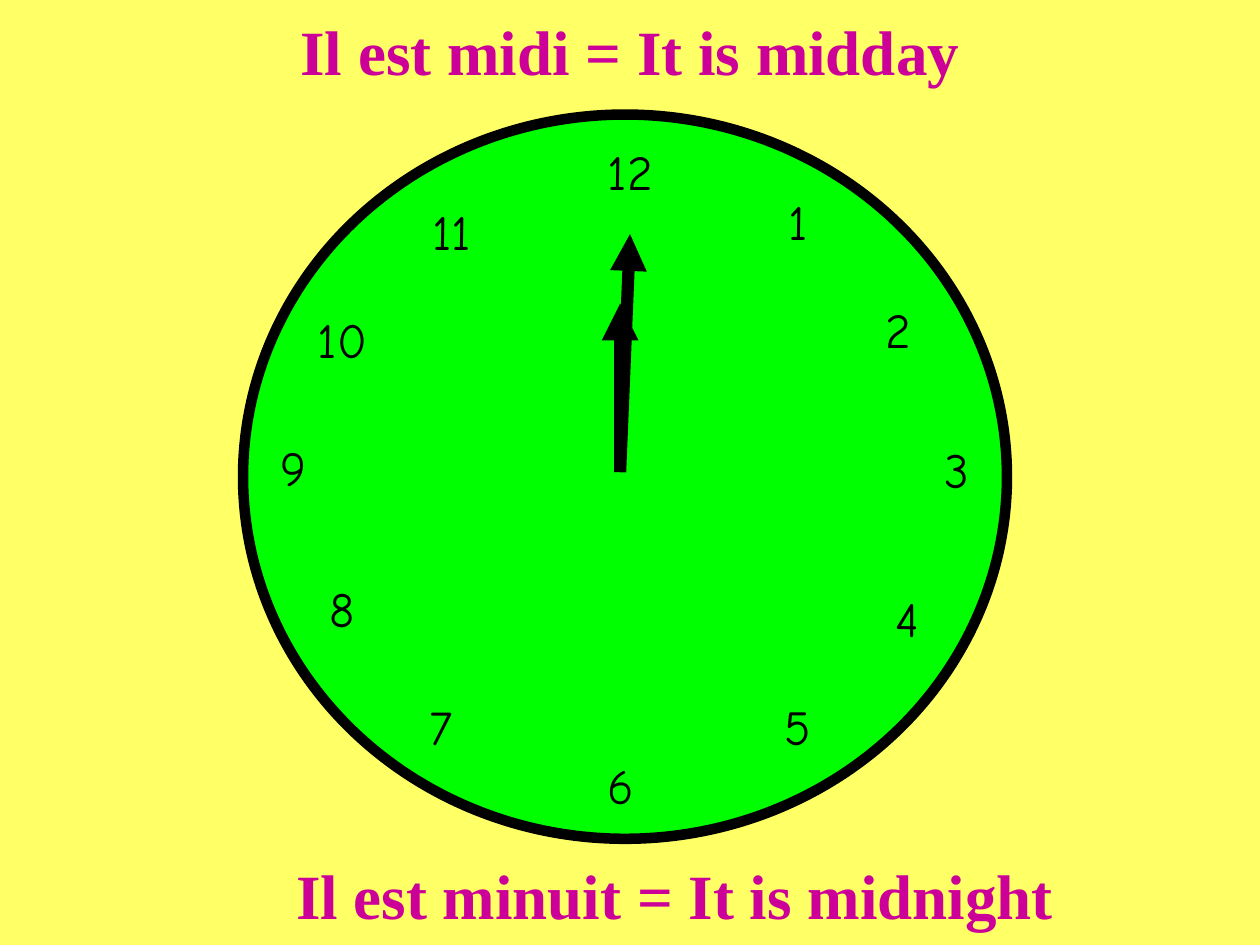
from dataclasses import dataclass

from lxml import etree
from pptx import Presentation
from pptx import util as u
from pptx.dml.color import RGBColor
from pptx.enum import shapes, text
from pptx.oxml.ns import qn


@dataclass(frozen=True)
class Theme:
    background: str = "FFFF66"
    face: str = "00FF00"
    ink: str = "000000"
    caption: str = "CC0099"
    number_font: str = "Comic Neue"
    caption_font: str = "Times New Roman"
    number_size: int = 28
    caption_size: int = 36
    rim_width: int = 6
    hand_width: int = 7


def color(value):
    return RGBColor.from_string(value)


def set_attributes(target, values):
    for name, value in values.items():
        setattr(target, name, value)


class ClockSlide:
    def __init__(self, presentation, theme):
        self.theme = theme
        self.slide = presentation.slides.add_slide(presentation.slide_layouts[6])
        fill = self.slide.background.fill
        fill.solid()
        fill.fore_color.rgb = color(theme.background)
        self.clock = self.slide.shapes.add_group_shape().shapes

    def outline(self, line, width):
        line.color.rgb = color(self.theme.ink)
        line.width = u.Pt(width)

    def face(self, left, top, width, height):
        shape = self.clock.add_shape(
            shapes.MSO_SHAPE.OVAL, u.Cm(left), u.Cm(top), u.Cm(width), u.Cm(height)
        )
        shape.shadow.inherit = False
        shape.fill.solid()
        shape.fill.fore_color.rgb = color(self.theme.face)
        self.outline(shape.line, self.theme.rim_width)

    def hand(self, tip, pivot):
        """Draw a clock hand with its arrowhead at the tip."""
        points = [u.Cm(value) for value in (*tip, *pivot)]
        connector = self.clock.add_connector(shapes.MSO_CONNECTOR.STRAIGHT, *points)
        self.outline(connector.line, self.theme.hand_width)
        properties = connector._element.spPr
        line = properties.find(qn("a:ln"))
        etree.SubElement(line, qn("a:headEnd"), type="triangle")
        etree.SubElement(properties, qn("a:effectLst"))

    def label(self, parent, content, box, font_values, font_color):
        """Add centred text with half a line of space before it."""
        frame = parent.add_textbox(*(u.Cm(value) for value in box)).text_frame
        set_attributes(frame, {
            "word_wrap": True,
            "auto_size": text.MSO_AUTO_SIZE.SHAPE_TO_FIT_TEXT,
        })
        paragraph = frame.paragraphs[0]
        paragraph.alignment = text.PP_ALIGN.CENTER
        spacing = etree.SubElement(paragraph._p.get_or_add_pPr(), qn("a:spcBef"))
        etree.SubElement(spacing, qn("a:spcPct"), val="50000")
        run = paragraph.add_run()
        run.text = content
        set_attributes(run.font, font_values)
        run.font.color.rgb = color(font_color)

    def number(self, hour, left, top):
        theme = self.theme
        values = {"name": theme.number_font, "size": u.Pt(theme.number_size)}
        self.label(self.clock, str(hour), (left, top, 1.6, 1.45), values, theme.ink)

    def caption(self, content, left, top, width):
        theme = self.theme
        values = {
            "name": theme.caption_font,
            "size": u.Pt(theme.caption_size),
            "bold": True,
        }
        box = (left, top, width, 1.78)
        self.label(self.slide.shapes, content, box, values, theme.caption)


HOUR_POSITIONS = {
    12: (11.91, 2.72),
    1: (15.29, 3.73),
    2: (17.3, 5.92),
    3: (18.49, 8.74),
    4: (17.5, 11.73),
    5: (15.29, 13.92),
    6: (11.71, 15.11),
    7: (8.1, 13.92),
    8: (6.1, 11.53),
    9: (5.11, 8.69),
    10: (6.1, 6.12),
    11: (8.31, 3.94),
}


def main():
    presentation = Presentation()
    presentation.slide_width = u.Cm(25.4)
    presentation.slide_height = u.Cm(19.05)

    clock = ClockSlide(presentation, Theme())
    clock.face(4.9, 2.31, 15.4, 14.6)
    pivot = (12.5, 9.52)
    for tip in ((12.7, 4.72), (12.5, 6.12)):
        clock.hand(tip, pivot)
    for hour, position in HOUR_POSITIONS.items():
        clock.number(hour, *position)
    clock.caption("Il est midi = It is midday", 5.7, 0.13, 14)
    clock.caption("Il est minuit = It is midnight", 5.3, 17.15, 16.6)

    presentation.save("out.pptx")


if __name__ == "__main__":
    main()
